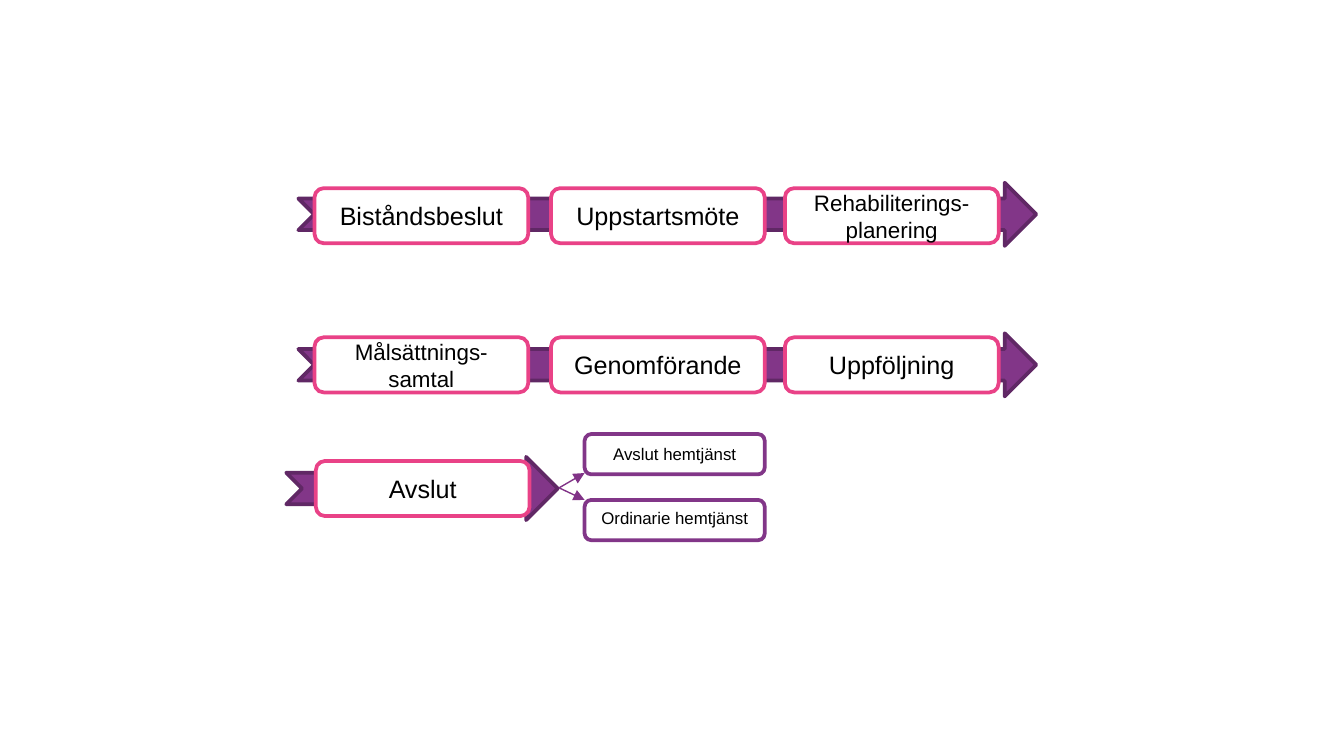
from typing import NamedTuple

from lxml import etree
from pptx import Presentation
from pptx.dml.color import RGBColor
from pptx.enum import shapes, text
from pptx.oxml.ns import qn
from pptx.util import Inches, Pt

PURPLE, DARK_PURPLE, PINK = "823688", "602865", "E94287"
CONNECTOR_PURPLE, WHITE, BLACK = "813387", "FFFFFF", "000000"
COLUMNS = (2.34, 4.1, 5.84)
STEP_SIZE = (1.59, 0.41)
OUTCOME_SIZE = (1.34, 0.3)
OUTCOME_LEFT = 4.35


class Arrow(NamedTuple):
    left: float
    top: float
    width: float
    height: float = 0.47


class Box(NamedTuple):
    label: str
    left: float
    top: float
    size: tuple[float, float] = STEP_SIZE
    points: float = 13.5
    outline: str = PINK


def colour(value: str) -> RGBColor:
    return RGBColor.from_string(value)


def add_outlined(page, kind, left: float, top: float, width: float,
                 height: float, fill: str, outline: str):
    shape = page.shapes.add_shape(
        kind, Inches(left), Inches(top), Inches(width), Inches(height))
    shape.shadow.inherit = False
    shape.fill.solid()
    shape.fill.fore_color.rgb = colour(fill)
    shape.line.color.rgb = colour(outline)
    shape.line.width = Pt(2)
    return shape


def write_label(frame, label: str, points: float) -> None:
    para = frame.paragraphs[0]
    para.alignment = text.PP_ALIGN.CENTER
    span = para.add_run()
    span.text = label
    span.font.name = "Arial"
    span.font.size = Pt(points)
    span.font.color.rgb = colour(BLACK)


def add_arrow(page, arrow: Arrow) -> None:
    add_outlined(page, shapes.MSO_SHAPE.NOTCHED_RIGHT_ARROW, *arrow,
                 PURPLE, DARK_PURPLE)


def add_box(page, box: Box) -> None:
    shape = add_outlined(page, shapes.MSO_SHAPE.FLOWCHART_ALTERNATE_PROCESS,
                         box.left, box.top, *box.size, WHITE, box.outline)
    if box.label:
        frame = shape.text_frame
        frame.word_wrap = True
        frame.vertical_anchor = text.MSO_ANCHOR.MIDDLE
        write_label(frame, box.label, box.points)


def add_caption(page, label: str, left: float, top: float,
                width: float, height: float, points: float) -> None:
    frame = page.shapes.add_textbox(
        Inches(left), Inches(top), Inches(width), Inches(height)).text_frame
    frame.word_wrap = False
    frame.auto_size = text.MSO_AUTO_SIZE.SHAPE_TO_FIT_TEXT
    write_label(frame, label, points)


def add_branch(page, start: tuple[float, float], end: tuple[float, float]) -> None:
    branch = page.shapes.add_connector(
        shapes.MSO_CONNECTOR.STRAIGHT, *map(Inches, start + end))
    branch.line.color.rgb = colour(CONNECTOR_PURPLE)
    branch.line.width = Pt(0.75)
    properties = branch.element.spPr
    etree.SubElement(properties.find(qn("a:ln")), qn("a:tailEnd"), type="triangle")
    etree.SubElement(properties, qn("a:effectLst"))


def main() -> None:
    deck = Presentation()
    deck.slide_width = Inches(10)
    deck.slide_height = deck.slide_width * 9 // 16
    page = deck.slides.add_slide(deck.slide_layouts[6])

    for arrow in (Arrow(2.13, 3.4, 2.02), Arrow(2.22, 2.48, 5.49),
                  Arrow(2.22, 1.36, 5.49)):
        add_arrow(page, arrow)

    rows = {
        1.4: (("Biståndsbeslut", 13.5), ("Uppstartsmöte", 13.5),
              ("Rehabiliterings-planering", 12)),
        2.51: (("Målsättnings-samtal", 12), ("Genomförande", 13.5),
               ("Uppföljning", 13.5)),
    }
    for top, steps in rows.items():
        for left, (label, points) in zip(COLUMNS, steps):
            add_box(page, Box(label, left, top, points=points))
    add_box(page, Box("Avslut", 2.35, 3.43))

    for label, top in (("Avslut hemtjänst", 3.23), ("", 3.72)):
        add_box(page, Box(label, OUTCOME_LEFT, top, OUTCOME_SIZE, 9, PURPLE))
    add_caption(page, "Ordinarie hemtjänst", 4.37, 3.73, 1.3, 0.25, 9)

    for end_top in (3.52, 3.72):
        add_branch(page, (4.16, 3.63), (OUTCOME_LEFT, end_top))

    deck.save("out.pptx")


if __name__ == "__main__":
    main()
